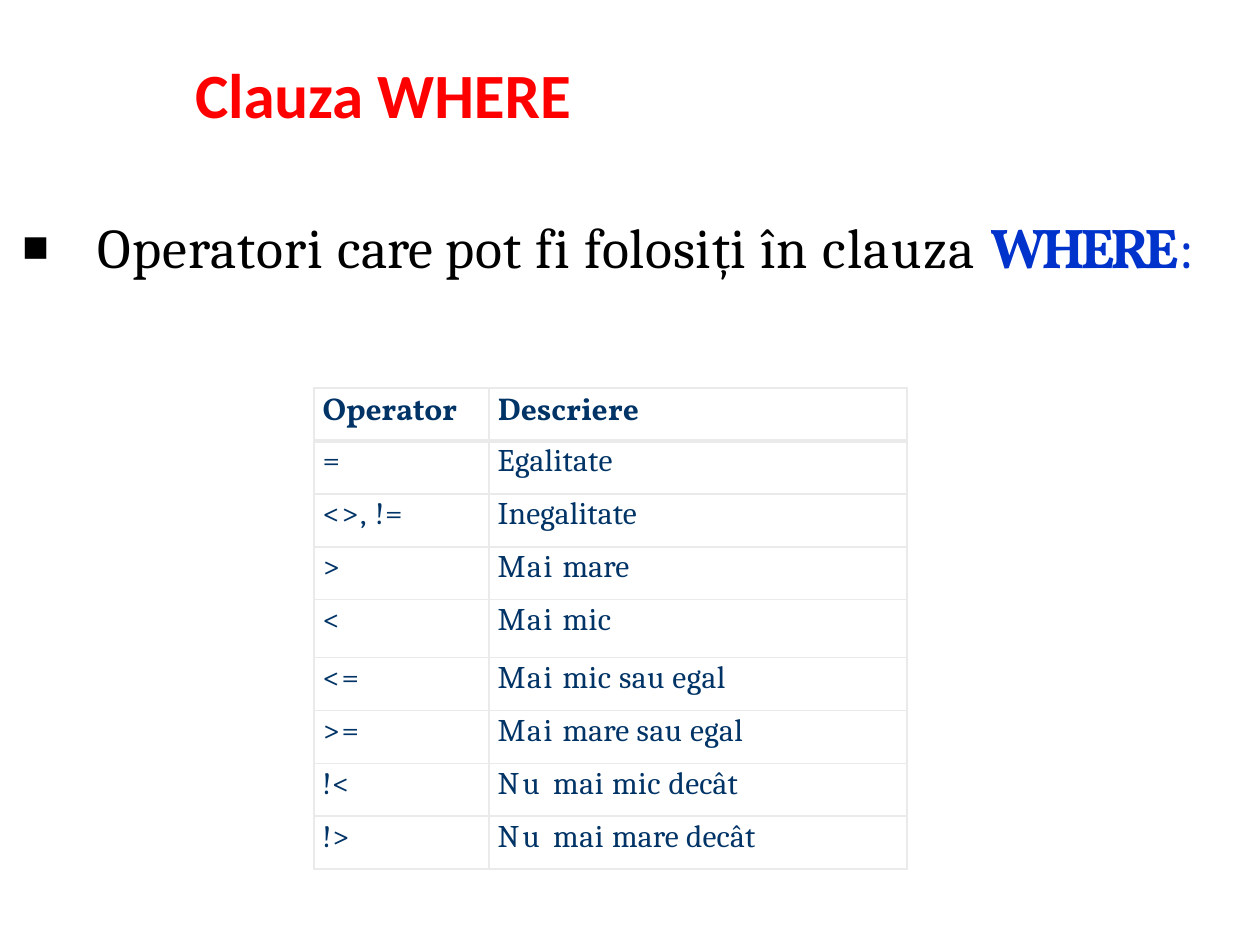
from lxml import etree
from pptx import Presentation
from pptx.dml.color import RGBColor
from pptx.enum.text import MSO_ANCHOR, MSO_AUTO_SIZE, PP_ALIGN
from pptx.oxml.ns import qn
from pptx.util import Pt

CENTER = PP_ALIGN.CENTER
TOP = MSO_ANCHOR.TOP
MIDDLE = MSO_ANCHOR.MIDDLE
NO_FIT = MSO_AUTO_SIZE.NONE
RED = RGBColor(0xFF, 0x00, 0x00)
BLACK = RGBColor(0x00, 0x00, 0x00)
BLUE = RGBColor(0x00, 0x33, 0xCC)
NAVY = RGBColor(0x00, 0x33, 0x66)
WHITE = RGBColor(0xFF, 0xFF, 0xFF)
GRAY = RGBColor(0xEA, 0xEA, 0xEA)


def add_spans(para, spans, name, size, color, bold=False):
    para.font.name = name
    para.font.size = Pt(size)
    para.font.color.rgb = color
    para.font.bold = bold
    for text, spacing in spans:
        span = para.add_run()
        span.text = text
        span.font._element.set("spc", str(round(spacing * 100)))


def set_border(cell, side, width):
    line = etree.SubElement(cell._tc.get_or_add_tcPr(), qn(f"a:{side}"), w=str(Pt(width)))
    fill = etree.SubElement(line, qn("a:solidFill"))
    etree.SubElement(fill, qn("a:srgbClr"), val=str(GRAY))


deck = Presentation()
deck.slide_width, deck.slide_height = Pt(720), Pt(540)
page = deck.slides.add_slide(deck.slide_layouts[1])
title, body = page.placeholders

for box, place, anchor in (
    (title, (54, 30.24, 329.76, 44.64), MIDDLE),
    (body, (12.24, 120.24, 694.8, 40.32), TOP),
):
    box.left, box.top, box.width, box.height = map(Pt, place)
    frame = box.text_frame
    frame.margin_left = frame.margin_right = frame.margin_bottom = 0
    frame.margin_top = Pt(1)
    frame.vertical_anchor = anchor
    frame.auto_size = NO_FIT
    frame.word_wrap = True

para = title.text_frame.paragraphs[0]
para.alignment = CENTER
para.space_before = Pt(1)
add_spans(para, [("Clauza ", -0.1), ("WHERE", 0)], "Calibri", 36, RED, True)

para = body.text_frame.paragraphs[0]
para.space_before = Pt(1.1)
props = para._p.get_or_add_pPr()
props.set("marL", str(Pt(43.5)))
props.set("indent", str(Pt(-42.8)))
etree.SubElement(props, qn("a:buSzPct"), val="75000")
etree.SubElement(props, qn("a:buFont"), typeface="Arial")
etree.SubElement(props, qn("a:buChar"), char="◼")
add_spans(
    para,
    [("Operatori ", 0.6), ("care ", -0.1), ("pot ", 0.5), ("fi ", 0.7),
     ("folosiți ", 0.4), ("în ", 0.5), ("clauza ", 0.8), ("WHERE", -2.8), (":", -2.8)],
    "Cambria", 32, BLACK,
)
keyword, colon = para.runs[-2:]
keyword.font.name = "Vollkorn"
keyword.font.bold = True
keyword.font.color.rgb = colon.font.color.rgb = BLUE

MAI = ("Mai ", 0.9)
NU_MAI = [("Nu ", 1.8), ("mai ", 0.4)]
rows = [
    ([("Operator", -0.1)], [("Descriere", 0)]),
    ([("=", 0)], [("Egalitate", 0.2)]),
    ([("<>, ", 0.8), ("!=", 0.4)], [("Inegalitate", 0.1)]),
    ([(">", 0)], [MAI, ("mare", 0.1)]),
    ([("<", 0)], [MAI, ("mic", 0.3)]),
    ([("<=", 0.9)], [MAI, ("mic sau egal", 0.3)]),
    ([(">=", 0.9)], [MAI, ("mare ", 0.1), ("sau egal", 0.3)]),
    ([("!<", 0.4)], [*NU_MAI, ("mic ", 0.3), ("decât", 0.1)]),
    ([("!>", 0.4)], [*NU_MAI, ("mare decât", 0.1)]),
]
table = page.shapes.add_table(
    len(rows), 2, Pt(179.3), Pt(221.8), Pt(339.1), Pt(275)
).table
table.first_row = table.horz_banding = False
table.columns[0].width, table.columns[1].width = Pt(100.1), Pt(239)

for r, texts in enumerate(rows):
    table.rows[r].height = Pt(33.1 if r == 4 else 30.24)
    for c, spans in enumerate(texts):
        cell = table.cell(r, c)
        cell.margin_left = cell.margin_right = cell.margin_bottom = 0
        cell.margin_top = Pt(1.44)
        for side in ("lnL", "lnR", "lnT", "lnB"):
            heavy = (r, side) in ((0, "lnB"), (1, "lnT"))
            set_border(cell, side, 3 if heavy else 1)
        cell.fill.solid()
        cell.fill.fore_color.rgb = WHITE
        para = cell.text_frame.paragraphs[0]
        para.space_before = Pt(1.6 if r == 0 else 1.4)
        para._p.get_or_add_pPr().set("marL", str(Pt(5.04)))
        add_spans(para, spans, "Cambria" if r else "Vollkorn", 18, NAVY, r == 0)

deck.save("out.pptx")
